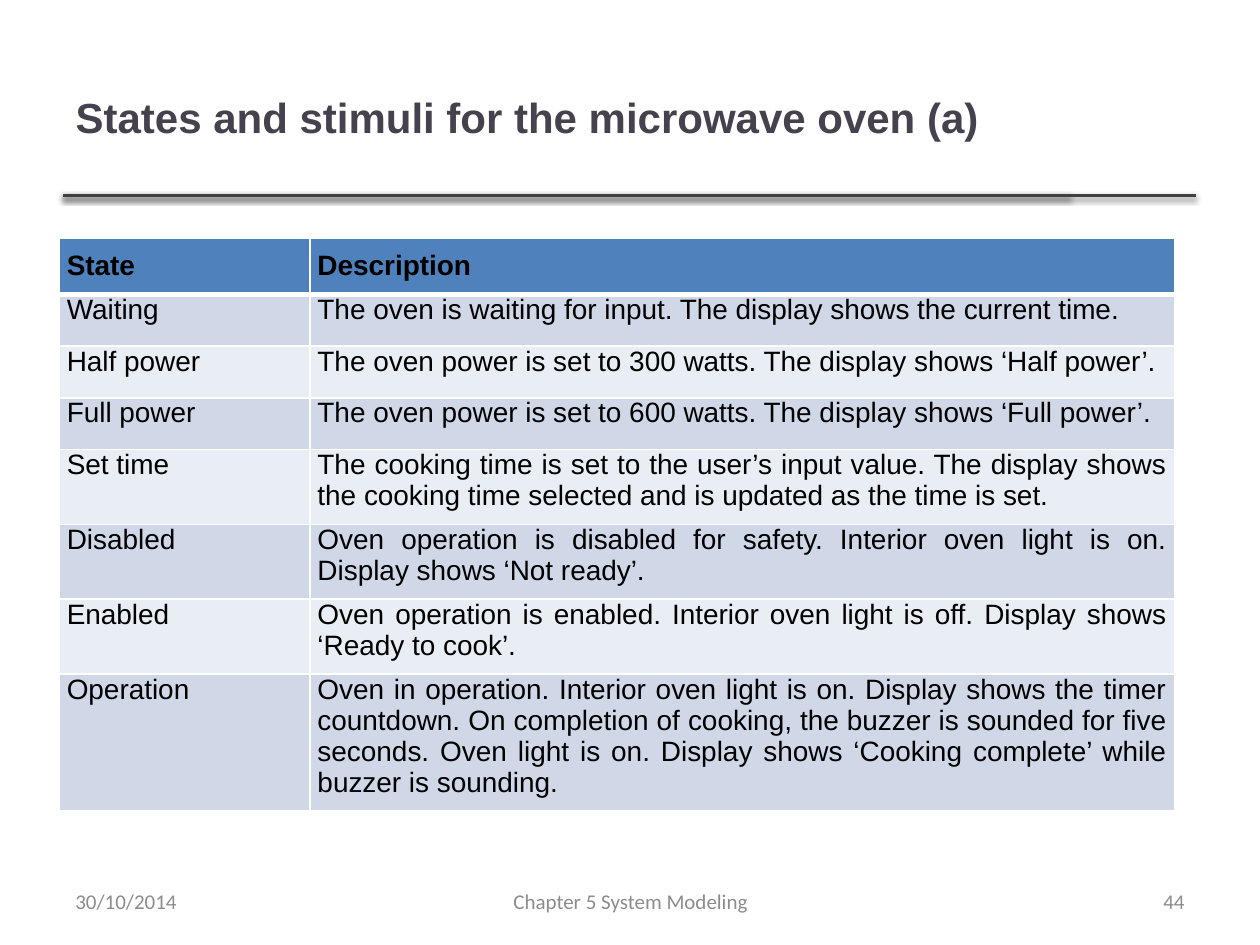
from dataclasses import dataclass

from lxml import etree
from pptx import Presentation
from pptx import util as u
from pptx.dml import color
from pptx.enum import shapes, text
from pptx.oxml import ns


@dataclass(frozen=True)
class Theme:
    title: str = "46424D"
    rule: str = "404040"
    footer: str = "8C8C8C"
    body: str = "000000"
    header: str = "4F81BD"
    bands: tuple = ("D0D8E8", "E9EDF4")
    border: str = "FFFFFF"
    body_font: str = "Arial"
    footer_font: str = "Calibri"
    title_size: int = 24
    table_size: int = 16
    footer_size: int = 12


THEME = Theme()
ALIGN = text.PP_ALIGN
ROWS = [
    ("State", "Description"),
    ("Waiting", "The oven is waiting for input. The display shows the current time."),
    ("Half power", "The oven power is set to 300 watts. The display shows ‘Half power’."),
    ("Full power", "The oven power is set to 600 watts. The display shows ‘Full power’."),
    ("Set time", "The cooking time is set to the user’s input value. The display shows "
                 "the cooking time selected and is updated as the time is set."),
    ("Disabled", "Oven operation is disabled for safety. Interior oven light is on. "
                 "Display shows ‘Not ready’."),
    ("Enabled", "Oven operation is enabled. Interior oven light is off. "
                "Display shows ‘Ready to cook’."),
    ("Operation", "Oven in operation. Interior oven light is on. Display shows the timer "
                  "countdown. On completion of cooking, the buzzer is sounded for five "
                  "seconds. Oven light is on. Display shows ‘Cooking complete’ while "
                  "buzzer is sounding."),
]
FOOTERS = [
    (0.5, 2.33, "30/10/2014", ALIGN.LEFT),
    (3.42, 3.17, "Chapter 5 System Modeling", ALIGN.CENTER),
    (7.17, 2.33, "44", ALIGN.RIGHT),
]


def apply(target, values):
    for name, value in values.items():
        setattr(target, name, value)


def inches(*lengths):
    return [u.Inches(length) for length in lengths]


def rgb(value):
    return color.RGBColor.from_string(value)


def write(frame, words, align, font, size, ink, bold=False):
    para = frame.paragraphs[0]
    para.alignment = align
    span = para.add_run()
    span.text = words
    apply(span.font, {"name": font, "size": u.Pt(size), "bold": bold})
    span.font.color.rgb = rgb(ink)


def child(parent, tag, **attributes):
    values = {name: str(value) for name, value in attributes.items()}
    return etree.SubElement(parent, ns.qn(tag), values)


def add_rule(page, left, top, width):
    line = page.shapes.add_connector(
        shapes.MSO_CONNECTOR.STRAIGHT, *inches(left, top, left + width, top))
    line.line.color.rgb = rgb(THEME.rule)
    line.line.width = u.Pt(2)
    effects = child(line._element.spPr, "a:effectLst")
    shadow = child(effects, "a:outerShdw", blurRad=u.Pt(3.1), dist=u.Pt(1.6),
                   dir=90 * 60000, rotWithShape=0)
    ink = child(shadow, "a:srgbClr", val="000000")
    child(ink, "a:alpha", val=38000)


def add_title(page, left, top, width, height):
    title = page.shapes.title
    apply(title, dict(zip(("left", "top", "width", "height"),
                          inches(left, top, width, height))))
    apply(title.text_frame, {"word_wrap": True, "auto_size": text.MSO_AUTO_SIZE.NONE,
                             "vertical_anchor": text.MSO_ANCHOR.MIDDLE})
    write(title.text_frame, "States and stimuli for the microwave oven (a)", ALIGN.LEFT,
          THEME.body_font, THEME.title_size, THEME.title, True)


def set_borders(cell, top, bottom):
    properties = cell._tc.get_or_add_tcPr()
    for side, points in (("L", 1), ("R", 1), ("T", top), ("B", bottom)):
        line = child(properties, f"a:ln{side}", w=u.Pt(points))
        child(child(line, "a:solidFill"), "a:srgbClr", val=THEME.border)


def format_cell(cell, row, words):
    is_header = row == 0
    apply(cell, {"margin_left": u.Inches(0.06), "margin_right": u.Inches(0.06),
                 "margin_top": u.Inches(0.1 if is_header else 0),
                 "margin_bottom": u.Inches(0.1)})
    set_borders(cell, 3 if row == 1 else 1, 3 if is_header else 1)
    cell.fill.solid()
    cell.fill.fore_color.rgb = rgb(THEME.header if is_header else THEME.bands[(row - 1) % 2])
    write(cell.text_frame, words, ALIGN.JUSTIFY, THEME.body_font,
          THEME.table_size, THEME.body, is_header)


def add_states(page, left, top, width, row_height):
    first = 1.99
    table = page.shapes.add_table(
        len(ROWS), 2, *inches(left, top, width, row_height * len(ROWS))).table
    for column, size in zip(table.columns, inches(first, width - first)):
        column.width = size
    for row, entries in enumerate(ROWS):
        table.rows[row].height = u.Inches(row_height)
        for column, words in enumerate(entries):
            format_cell(table.cell(row, column), row, words)


def add_footers(page, top, height):
    for left, width, words, align in FOOTERS:
        box = page.shapes.add_textbox(*inches(left, top, width, height))
        apply(box.text_frame, {"word_wrap": True,
                               "vertical_anchor": text.MSO_ANCHOR.MIDDLE})
        write(box.text_frame, words, align, THEME.footer_font,
              THEME.footer_size, THEME.footer)


def main():
    deck = Presentation()
    apply(deck, {"slide_width": u.Inches(10), "slide_height": u.Inches(7.5)})
    page = deck.slides.add_slide(deck.slide_layouts.get_by_name("Title Only"))
    for width in (7.99, 8.99):
        add_rule(page, 0.5, 1.55, width)
    add_title(page, 0.5, 0.3, 7.98, 1.25)
    add_states(page, 0.47, 1.89, 8.85, 0.41)
    add_footers(page, 6.95, 0.4)
    deck.save("out.pptx")


if __name__ == "__main__":
    main()
